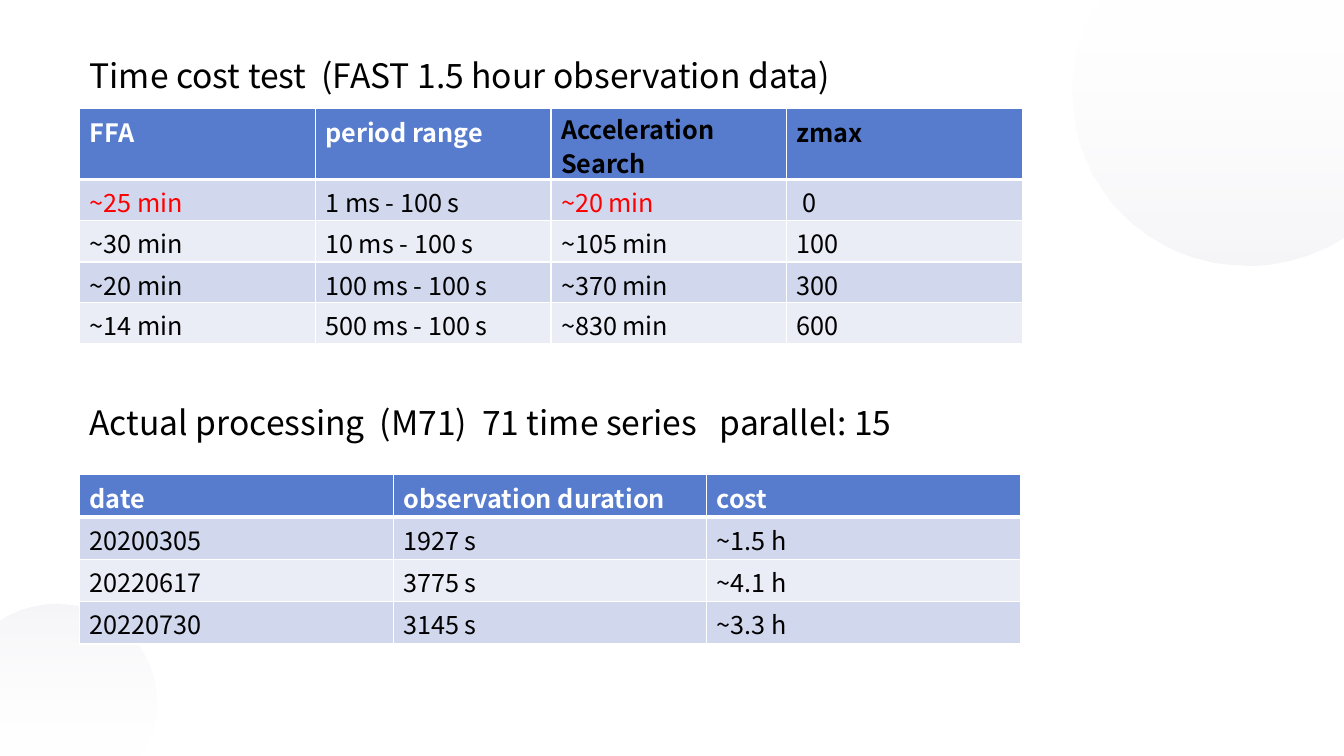
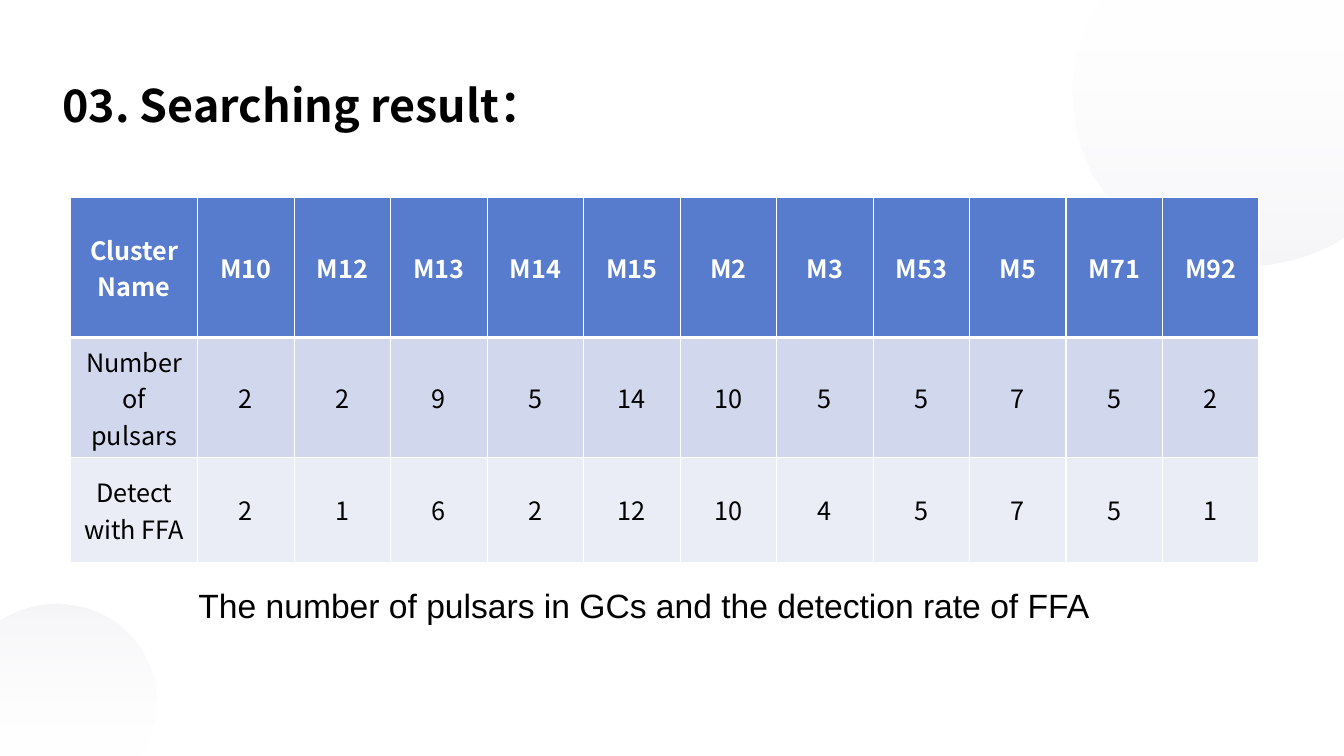
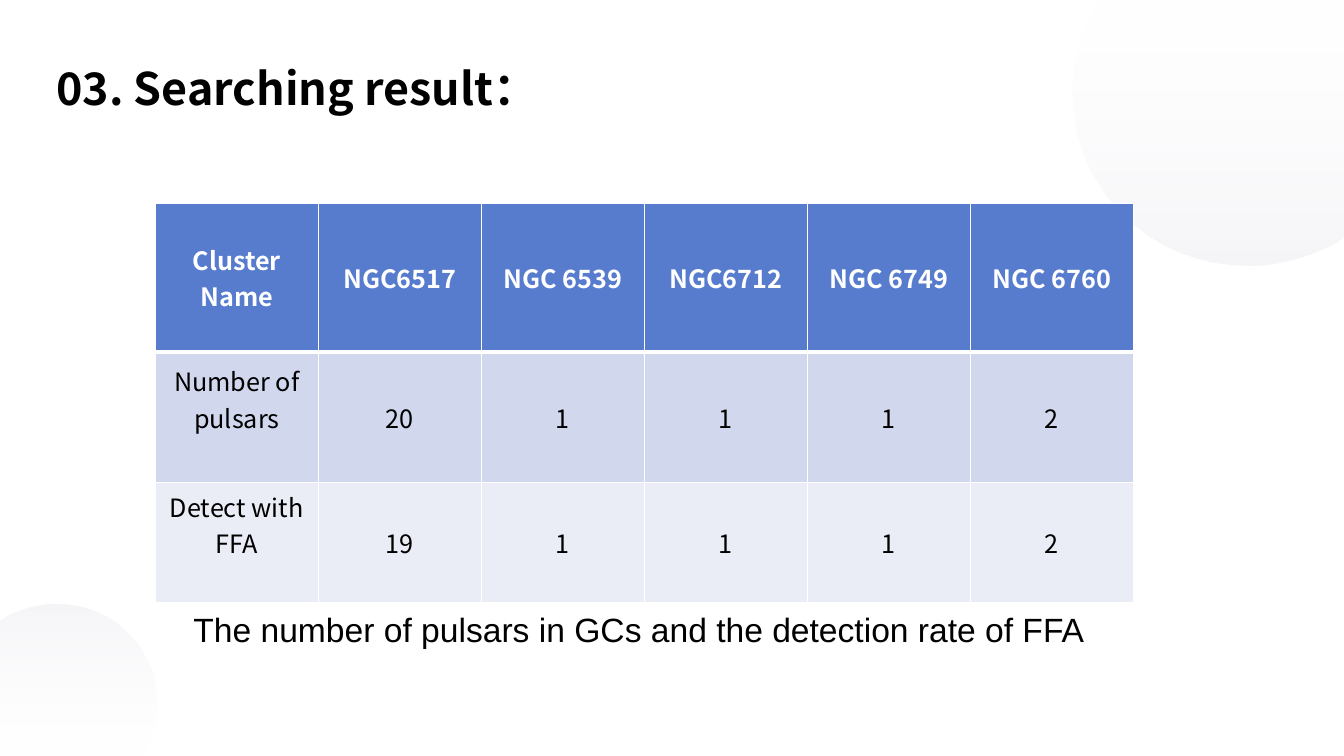
import pptx
import pptx.dml.color
import pptx.enum.text
import pptx.oxml
import pptx.oxml.ns
import pptx.util
from pptx.util import Inches

ALIGN = pptx.enum.text.PP_ALIGN
ANCHOR = pptx.enum.text.MSO_ANCHOR
NS = pptx.oxml.ns.nsdecls("a")
FONT = "Noto Sans CJK SC"
BLACK, WHITE, RED = "000000", "FFFFFF", "FF0000"
HEADER, BANDS = "577CCE", ("D1D7ED", "EAECF6")
SHADE = ((WHITE, 10), ("D8D8E4", 24))
CUT_CIRCLE = [
    [(0.28, 0)],
    [(2.7, 0)],
    [(2.7, 2.34)],
    [(2.56, 2.42)],
    [(2.31, 2.55), (2.03, 2.63), (1.73, 2.63)],
    [(0.77, 2.63), (0, 1.87), (0, 0.92)],
    [(0, 0.63), (0.07, 0.35), (0.21, 0.11)],
]


def rgb(value):
    return pptx.dml.color.RGBColor.from_string(value)


def style(p, size, color=BLACK, bold=False, font=FONT):
    p.font.size = pptx.util.Pt(size)
    p.font.color.rgb = rgb(color)
    p.font.bold = bold
    p.font.name = font


def add_text(s, text, left, top, width, height, size=24, bold=False, font=FONT):
    tf = s.shapes.add_textbox(Inches(left), Inches(top), Inches(width), Inches(height)).text_frame
    tf.word_wrap = True
    p = tf.paragraphs[0]
    p.text = text
    style(p, size, bold=bold, font=font)
    return p


def add_title(s, left, top, width, height):
    return add_text(s, "03. Searching result：", left, top, width, height, size=32, bold=True)


def add_caption(s, left, top, width, height):
    add_text(s, "The number of pulsars in GCs and the detection rate of FFA",
             left, top, width, height, font="Arial")


def add_cut_circle(s, left, top, scale=1, rotation=0):
    steps = [[(Inches(x * scale), Inches(y * scale)) for x, y in step] for step in CUT_CIRCLE]
    builder = s.shapes.build_freeform(*steps[0][0])
    builder.add_line_segments([step[-1] for step in steps[1:]], close=True)
    sp = builder.convert_to_shape(Inches(left), Inches(top))
    lines = list(sp._element.spPr.iter(pptx.oxml.ns.qn("a:lnTo")))
    for line, step in zip(lines, steps[1:]):
        if len(step) == 3:
            points = "".join(f'<a:pt x="{x}" y="{y}"/>' for x, y in step)
            line.getparent().replace(line, pptx.oxml.parse_xml(
                f"<a:cubicBezTo {NS}>{points}</a:cubicBezTo>"))
    sp.rotation = rotation
    sp.shadow.inherit = False
    sp.line.fill.background()
    sp.fill.gradient()
    sp.fill.gradient_angle = 270
    for position, (stop, (color, opacity)) in enumerate(zip(sp.fill.gradient_stops, SHADE)):
        stop.position = position
        stop.color.rgb = rgb(color)
    colors = list(sp._element.spPr.iter(pptx.oxml.ns.qn("a:srgbClr")))
    for element, (color, opacity) in zip(colors, SHADE):
        element.append(pptx.oxml.parse_xml(f'<a:alpha {NS} val="{opacity * 1000}"/>'))


def add_borders(cell, top, bottom):
    tcPr = cell._tc.get_or_add_tcPr()
    for i, (side, points) in enumerate((("L", 1), ("R", 1), ("T", top), ("B", bottom))):
        tcPr.insert(i, pptx.oxml.parse_xml(
            f'<a:ln{side} {NS} w="{points * 12700}">'
            f'<a:solidFill><a:srgbClr val="{WHITE}"/></a:solidFill></a:ln{side}>'))


def add_table(s, rows, left, top, width, heights, first=None, centered=False, colors=None):
    count = len(rows[0])
    first = first or width / count
    table = s.shapes.add_table(len(rows), count, Inches(left), Inches(top),
                               Inches(width), Inches(sum(heights))).table
    table.first_row = table.horz_banding = False
    for c, column in enumerate(table.columns):
        column.width = Inches((width - first) / (count - 1) if c else first)
    for r, row in enumerate(rows):
        table.rows[r].height = Inches(heights[r])
        for c, text in enumerate(row):
            cell = table.cell(r, c)
            cell.text = text
            add_borders(cell, 3 if r == 1 else 1, 1 if r else 3)
            cell.fill.solid()
            cell.fill.fore_color.rgb = rgb(BANDS[(r - 1) % 2] if r else HEADER)
            if centered:
                cell.vertical_anchor = ANCHOR.MIDDLE
            else:
                cell.margin_top = Inches(0.04)
                cell.margin_bottom = 0
            color = (colors or {}).get((r, c), BLACK if r else WHITE)
            for p in cell.text_frame.paragraphs:
                style(p, 18, color, bold=r == 0)
                if centered:
                    p.alignment = ALIGN.CENTER
    return table


def add_slide(prs):
    s = prs.slides.add_slide(prs.slide_layouts[6])
    add_cut_circle(s, 10.64, 0)
    add_cut_circle(s, 0, 5.99, scale=0.574, rotation=180)
    return s


def time_cost(prs):
    s = add_slide(prs)
    add_text(s, "Time cost test  (FAST 1.5 hour observation data)", 0.79, 0.5, 8.34, 0.65)
    add_text(s, "Actual processing  (M71)  71 time series   parallel: 15", 0.79, 3.94, 9.17, 0.5)
    table = add_table(s, [
        ["FFA", "period range", "Acceleration Search", "zmax"],
        ["~25 min", "1 ms - 100 s", "~20 min", " 0"],
        ["~30 min", "10 ms - 100 s", "~105 min", "100"],
        ["~20 min", "100 ms - 100 s", "~370 min", "300"],
        ["~14 min", "500 ms - 100 s", "~830 min", "600"],
    ], 0.79, 1.08, 9.35, [0.7, 0.41, 0.41, 0.4, 0.41],
        colors={(0, 2): BLACK, (0, 3): BLACK, (1, 0): RED, (1, 2): RED})
    table.cell(0, 2).text_frame.paragraphs[0].line_spacing = 0.92
    add_table(s, [
        ["date", "observation duration", "cost"],
        ["20200305", "1927 s", "~1.5 h"],
        ["20220617", "3775 s", "~4.1 h"],
        ["20220730", "3145 s", "~3.3 h"],
    ], 0.79, 4.71, 9.33, [0.42] * 4)


def messier_result(prs):
    s = add_slide(prs)
    p = add_title(s, 0.52, 0.46, 5.48, 0.97)
    p.alignment = ALIGN.JUSTIFY
    p.line_spacing = 1.5
    p.space_after = pptx.util.Pt(20)
    add_table(s, [
        ["Cluster Name", "M10", "M12", "M13", "M14", "M15", "M2", "M3", "M53", "M5", "M71", "M92"],
        ["Number of\npulsars", "2", "2", "9", "5", "14", "10", "5", "5", "7", "5", "2"],
        ["Detect with FFA", "2", "1", "6", "2", "12", "10", "4", "5", "7", "5", "1"],
    ], 0.7, 1.96, 11.79, [1.39, 1.19, 1.04], first=1.26, centered=True)
    add_caption(s, 1.87, 5.75, 9.45, 0.66)


def ngc_result(prs):
    s = add_slide(prs)
    table = add_table(s, [
        ["Cluster Name", "NGC6517", "NGC 6539", "NGC6712", "NGC 6749", "NGC 6760"],
        ["Number of\npulsars", "20", "1", "1", "1", "2"],
        ["Detect with FFA", "19", "1", "1", "1", "2"],
    ], 1.54, 2.02, 9.7, [1.47, 1.3, 1.19], centered=True)
    for r in (1, 2):
        table.cell(r, 0).margin_bottom = Inches(0.41)
    add_title(s, 0.46, 0.55, 5.09, 0.64)
    add_caption(s, 1.82, 5.99, 9.14, 0.91)


def main():
    prs = pptx.Presentation()
    prs.slide_width, prs.slide_height = Inches(13.33), Inches(7.5)
    time_cost(prs)
    messier_result(prs)
    ngc_result(prs)
    prs.save("out.pptx")


if __name__ == "__main__":
    main()
